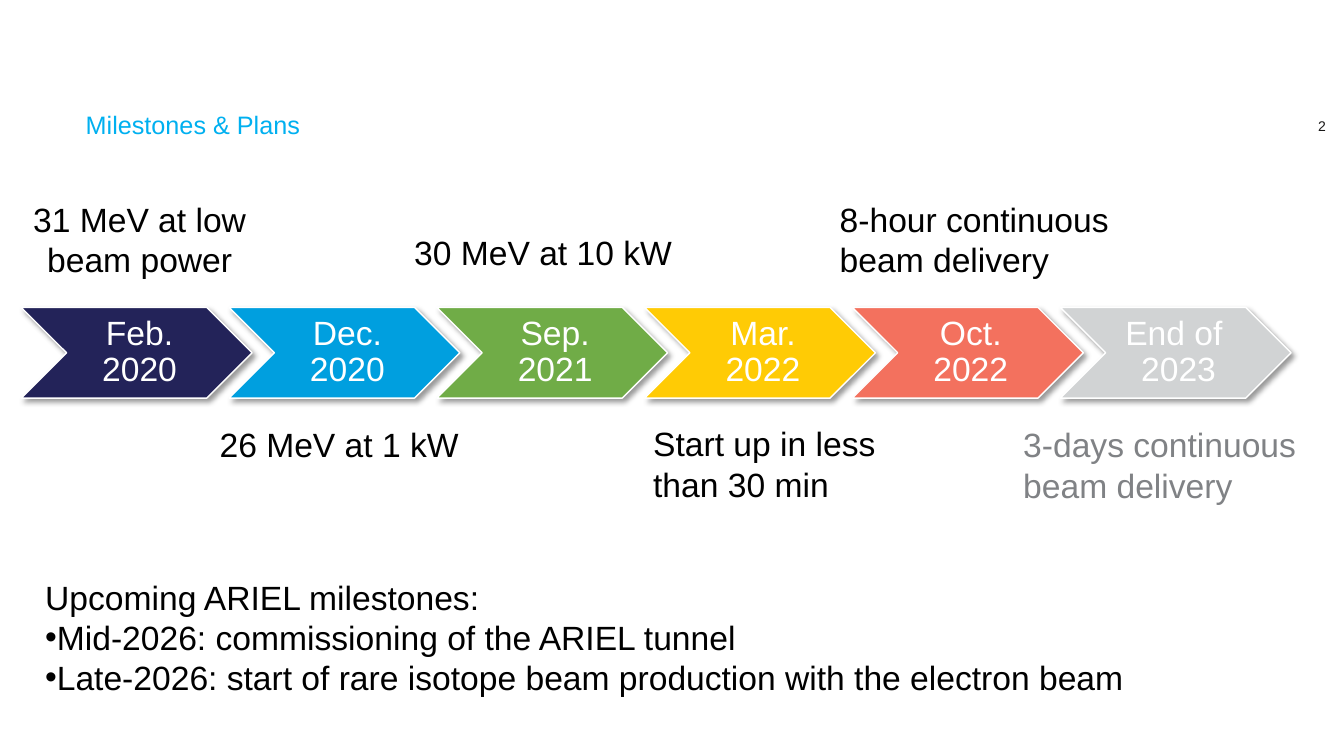
from dataclasses import dataclass

from lxml.etree import SubElement
from pptx import Presentation
from pptx.dml.color import RGBColor
from pptx.enum.shapes import MSO_SHAPE
from pptx.enum.text import MSO_ANCHOR, MSO_AUTO_SIZE, PP_ALIGN
from pptx.oxml.ns import qn
from pptx.shapes.autoshape import Shape
from pptx.slide import Slide
from pptx.text.text import TextFrame, _Paragraph
from pptx.util import Inches, Pt


@dataclass(frozen=True)
class Theme:
    font: str = "Arial"
    black: str = "000000"
    white: str = "FFFFFF"
    title: str = "00B0F0"
    number: str = "181717"
    muted: str = "808285"
    title_size: int = 18
    body_size: int = 24
    number_size: int = 10


@dataclass(frozen=True)
class Milestone:
    date: str
    fill: str


@dataclass(frozen=True)
class Label:
    text: str
    left: float
    top: float
    width: float
    height: float
    color: str
    align: PP_ALIGN = PP_ALIGN.LEFT


THEME = Theme()

MILESTONES = [
    Milestone("Feb. 2020", "232359"),
    Milestone("Dec. 2020", "009FDF"),
    Milestone("Sep. 2021", "70AC47"),
    Milestone("Mar. 2022", "FFCB05"),
    Milestone("Oct. 2022", "F3715E"),
    Milestone("End of  2023", "D1D3D4"),
]
CHEVRON_LEFT, CHEVRON_TOP = 0.21, 3.05
CHEVRON_WIDTH, CHEVRON_HEIGHT = 2.29, 0.9
CHEVRON_STEP = CHEVRON_WIDTH * 0.9

LABELS = [
    Label("31 MeV at low beam power", 0.2, 1.92, 2.37, 0.91, THEME.black, PP_ALIGN.CENTER),
    Label("30 MeV at 10 kW", 4.01, 2.25, 2.78, 0.5, THEME.black),
    Label("26 MeV at 1 kW", 2.08, 4.16, 2.61, 0.5, THEME.black),
    Label("Start up in less than 30 min", 6.38, 4.15, 2.61, 0.91, THEME.black),
    Label("8-hour continuous beam delivery", 8.23, 1.92, 2.91, 0.91, THEME.black),
    Label("3-days continuous beam delivery", 10.05, 4.16, 3.05, 0.91, THEME.muted),
]

UPCOMING_HEADING = "Upcoming ARIEL milestones:"
UPCOMING = [
    "Mid-2026: commissioning of the ARIEL tunnel",
    "Late-2026: start of rare isotope beam production with the electron beam",
]


def add_span(para: _Paragraph, text: str, size: int, color: str) -> None:
    span = para.add_run()
    span.text = text
    span.font.name = THEME.font
    span.font.size = Pt(size)
    span.font.color.rgb = RGBColor.from_string(color)


def add_box(page: Slide, left: float, top: float, width: float, height: float) -> TextFrame:
    box = page.shapes.add_textbox(Inches(left), Inches(top), Inches(width), Inches(height))
    box.text_frame.word_wrap = True
    return box.text_frame


def set_title(page: Slide, text: str) -> None:
    title = page.shapes.title
    title.left, title.top = Inches(0.75), Inches(1.07)
    title.width, title.height = Inches(9.79), Inches(0.71)
    frame = title.text_frame
    frame.auto_size = MSO_AUTO_SIZE.NONE
    frame.vertical_anchor = MSO_ANCHOR.TOP
    para = frame.paragraphs[0]
    para.alignment = PP_ALIGN.LEFT
    para.line_spacing = 0.9
    add_span(para, text, THEME.title_size, THEME.title)


def add_page_number(page: Slide, number: str) -> None:
    frame = add_box(page, 12.5, 1.07, 0.7, 0.35)
    frame.vertical_anchor = MSO_ANCHOR.MIDDLE
    frame.margin_right = Inches(0.05)
    para = frame.paragraphs[0]
    para.alignment = PP_ALIGN.RIGHT
    add_span(para, number, THEME.number_size, THEME.number)


def add_label(page: Slide, label: Label) -> None:
    frame = add_box(page, label.left, label.top, label.width, label.height)
    para = frame.paragraphs[0]
    para.alignment = label.align
    add_span(para, label.text, THEME.body_size, label.color)


def add_drop_shadow(shape: Shape) -> None:
    """Give the shape a soft shadow towards its lower right."""
    shape.shadow.inherit = False
    effects = shape.element.spPr.find(qn("a:effectLst"))
    shadow = SubElement(effects, qn("a:outerShdw"), blurRad=str(Pt(4)), dist=str(Pt(3)),
                        dir=str(45 * 60000), algn="tl", rotWithShape="0")
    color = SubElement(shadow, qn("a:srgbClr"), val=THEME.black)
    SubElement(color, qn("a:alpha"), val="40000")


def add_chevron(page: Slide, index: int, milestone: Milestone) -> None:
    chevron = page.shapes.add_shape(
        MSO_SHAPE.CHEVRON, Inches(CHEVRON_LEFT + index * CHEVRON_STEP), Inches(CHEVRON_TOP),
        Inches(CHEVRON_WIDTH), Inches(CHEVRON_HEIGHT))
    chevron.fill.solid()
    chevron.fill.fore_color.rgb = RGBColor.from_string(milestone.fill)
    chevron.line.color.rgb = RGBColor.from_string(THEME.white)
    chevron.line.width = Pt(1)
    add_drop_shadow(chevron)
    frame = chevron.text_frame
    frame.word_wrap = True
    frame.vertical_anchor = MSO_ANCHOR.MIDDLE
    frame.margin_left = Inches(0.1)
    frame.margin_top = frame.margin_right = frame.margin_bottom = Inches(0.04)
    para = frame.paragraphs[0]
    para.alignment = PP_ALIGN.CENTER
    para.line_spacing = 0.9
    add_span(para, milestone.date, THEME.body_size, THEME.white)


def add_upcoming(page: Slide) -> None:
    frame = add_box(page, 0.35, 5.67, 12.14, 1.31)
    add_span(frame.paragraphs[0], UPCOMING_HEADING, THEME.body_size, THEME.black)
    for text in UPCOMING:
        para = frame.add_paragraph()
        settings = para._p.get_or_add_pPr()
        settings.set("marL", "0")
        settings.set("indent", str(Inches(-0.31)))
        SubElement(settings, qn("a:buFont"), typeface=THEME.font)
        SubElement(settings, qn("a:buChar"), char="•")
        add_span(para, text, THEME.body_size, THEME.black)


def main() -> None:
    deck = Presentation()
    deck.slide_width, deck.slide_height = Inches(13.33), Inches(7.5)
    page = deck.slides.add_slide(deck.slide_layouts.get_by_name("Title Only"))
    add_page_number(page, "2")
    set_title(page, "Milestones & Plans")
    for label in LABELS:
        add_label(page, label)
    for index, milestone in enumerate(MILESTONES):
        add_chevron(page, index, milestone)
    add_upcoming(page)
    deck.save("out.pptx")


if __name__ == "__main__":
    main()
